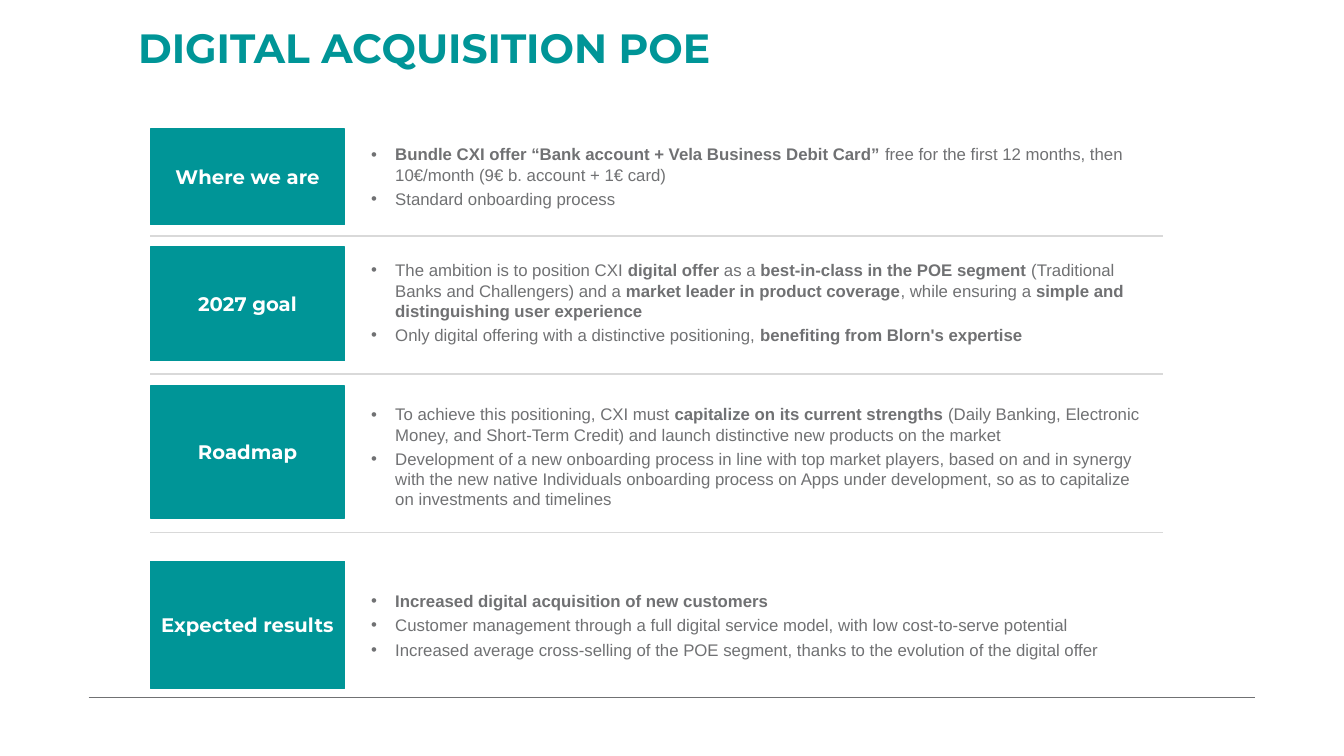
import pptx
import pptx.util
import pptx.dml.color
import pptx.enum.shapes
import pptx.enum.text
import pptx.oxml.ns
import lxml.etree

PX = 9144  # EMU per px, 100 px to the inch
RGB = pptx.dml.color.RGBColor
TEAL = RGB(0x00, 0x95, 0x97)
GREY = RGB(0x70, 0x71, 0x73)
PALE = RGB(0xD9, 0xD9, 0xD9)
WHITE = RGB(0xFF, 0xFF, 0xFF)
Pt = pptx.util.Pt
qn = pptx.oxml.ns.qn
ANCHOR = pptx.enum.text.MSO_ANCHOR
ALIGN = pptx.enum.text.PP_ALIGN
FIT = pptx.enum.text.MSO_AUTO_SIZE

HEAD = {"name": "Montserrat", "size": Pt(29.2), "bold": True}
LABEL = {"name": "Montserrat", "size": Pt(14), "bold": True}
BODY = {"name": "Arial", "size": Pt(12)}
FRAME = {"word_wrap": True, "auto_size": FIT.NONE}
LIST = {"alignment": ALIGN.LEFT, "line_spacing": 1.0,
        "space_before": Pt(0), "space_after": Pt(3)}


def style(item, look, tint=None):
    for key, value in look.items():
        setattr(item, key, value)
    if tint is not None:
        item.color.rgb = tint


def place(item, left, top, width, height):
    box = {"left": left, "top": top, "width": width, "height": height}
    style(item, {key: value * PX for key, value in box.items()})


# Label, label top and height, list top and height, bullets (** marks bold)
ROWS = [
    ("Where we are", 128, 95, 138, 75, [
        "**Bundle CXI offer “Bank account + Vela Business Debit Card” **free for "
        "the first 12 months, then 10€/month (9€ b. account + 1€ card)",
        "Standard onboarding process"]),
    ("2027 goal", 245, 113, 253, 95, [
        "The ambition is to position CXI **digital offer **as a **best-in-class in "
        "the POE segment **(Traditional Banks and Challengers) and a **market leader "
        "in product coverage**, while ensuring a **simple and distinguishing user "
        "experience**",
        "Only digital offering with a distinctive positioning, **benefiting from "
        "Blorn's expertise**"]),
    ("Roadmap", 383, 131, 396, 115, [
        "To achieve this positioning, CXI must **capitalize on its current strengths "
        "**(Daily Banking, Electronic Money, and Short-Term Credit) and launch "
        "distinctive new products on the market",
        "Development of a new onboarding process in line with top market players, "
        "based on and in synergy with the new native Individuals onboarding process "
        "on Apps under development, so as to capitalize on investments and timelines"]),
    ("Expected results", 557, 126, 581, 79, [
        "**Increased digital acquisition of new customers**",
        "Customer management through a full digital service model, with low "
        "cost-to-serve potential",
        "Increased average cross-selling of the POE segment, thanks to the evolution "
        "of the digital offer"]),
]

# Slide: the comparison layout holds a title and four bodies
deck = pptx.Presentation()
deck.slide_width, deck.slide_height = 1333 * PX, 750 * PX
slide = deck.slides.add_slide(deck.slide_layouts[4])
shapes = slide.shapes

# Title
title = shapes.title
place(title, 127, 25, 1150, 52)
style(title.text_frame, FRAME | {"vertical_anchor": ANCHOR.TOP})
title.text_frame.text = "DIGITAL ACQUISITION POE"
para = title.text_frame.paragraphs[0]
style(para, {"alignment": ALIGN.LEFT, "line_spacing": 0.85})
style(para.runs[0].font, HEAD, TEAL)

# Rows: teal label and bullet list
bodies = list(slide.placeholders)[1:]
for body, (name, top, high, start, tall, points) in zip(bodies, ROWS):
    label = shapes.add_shape(pptx.enum.shapes.MSO_SHAPE.RECTANGLE, 0, 0, 0, 0)
    place(label, 149, top, 193, high)
    label.shadow.inherit = False
    label.fill.solid()
    label.fill.fore_color.rgb = TEAL
    label.line.color.rgb = TEAL
    label.line.width = Pt(1)
    frame = label.text_frame
    style(frame, FRAME | {"vertical_anchor": ANCHOR.MIDDLE})
    for side in ("left", "right", "top", "bottom"):
        setattr(frame, "margin_" + side, 4 * PX)
    frame.text = name
    frame.paragraphs[0].alignment = ALIGN.CENTER
    style(frame.paragraphs[0].runs[0].font, LABEL, WHITE)

    place(body, 360, start, 793, tall)
    frame = body.text_frame
    style(frame, FRAME | {"vertical_anchor": ANCHOR.TOP, "margin_left": 8 * PX,
                          "margin_right": 8 * PX, "margin_top": 5 * PX,
                          "margin_bottom": 5 * PX})
    for num, point in enumerate(points):
        para = frame.add_paragraph() if num else frame.paragraphs[0]
        style(para, LIST)
        props = para._p.get_or_add_pPr()
        props.set("marL", str(24 * PX))
        props.set("indent", str(-24 * PX))
        lxml.etree.SubElement(props, qn("a:buFont"), typeface="Arial")
        lxml.etree.SubElement(props, qn("a:buChar"), char="•")
        for turn, part in enumerate(point.split("**")):
            if part:
                run = para.add_run()
                run.text = part
                style(run.font, BODY | {"bold": turn % 2 == 1}, GREY)

# Row dividers and footer rule
RULES = [(149, 1153, y, PALE, 1) for y in (234, 371, 528)]
RULES.append((88, 1245, 692, GREY, 0.5))
for left, right, y, tint, width in RULES:
    rule = shapes.add_connector(pptx.enum.shapes.MSO_CONNECTOR.STRAIGHT,
                                left * PX, y * PX, right * PX, y * PX)
    rule.line.color.rgb = tint
    rule.line.width = Pt(width)
    lxml.etree.SubElement(rule._element.spPr, qn("a:effectLst"))

deck.save("out.pptx")
